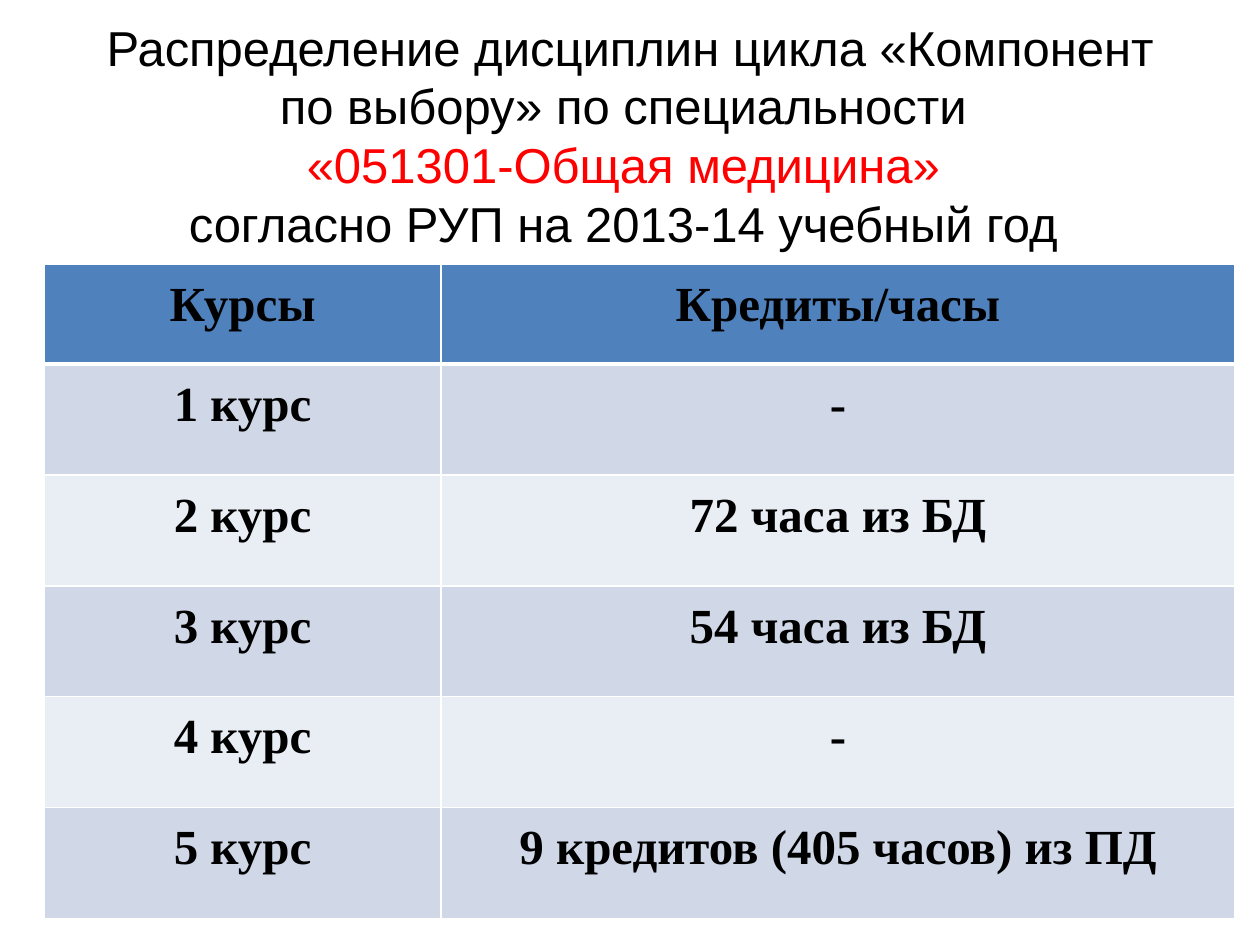
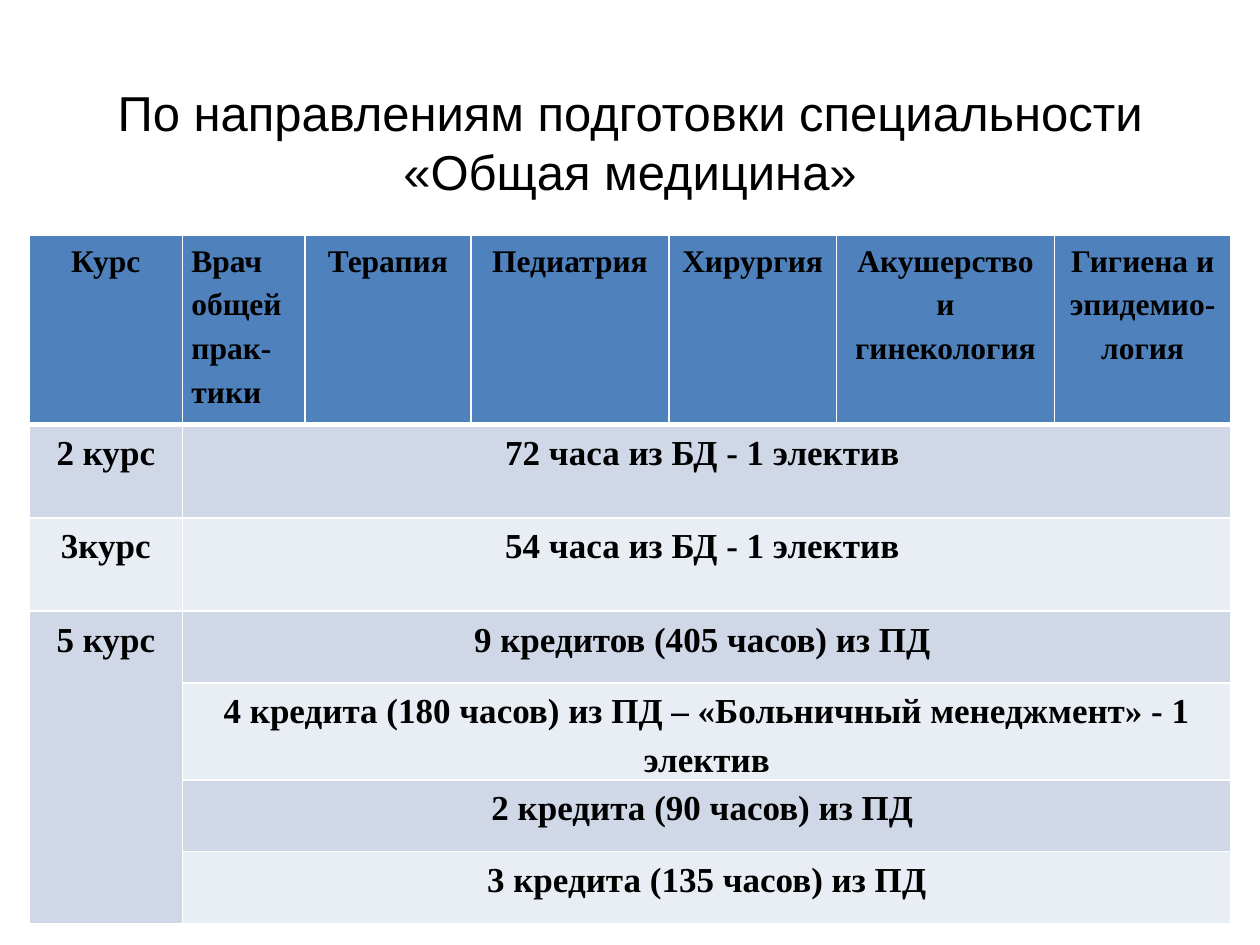
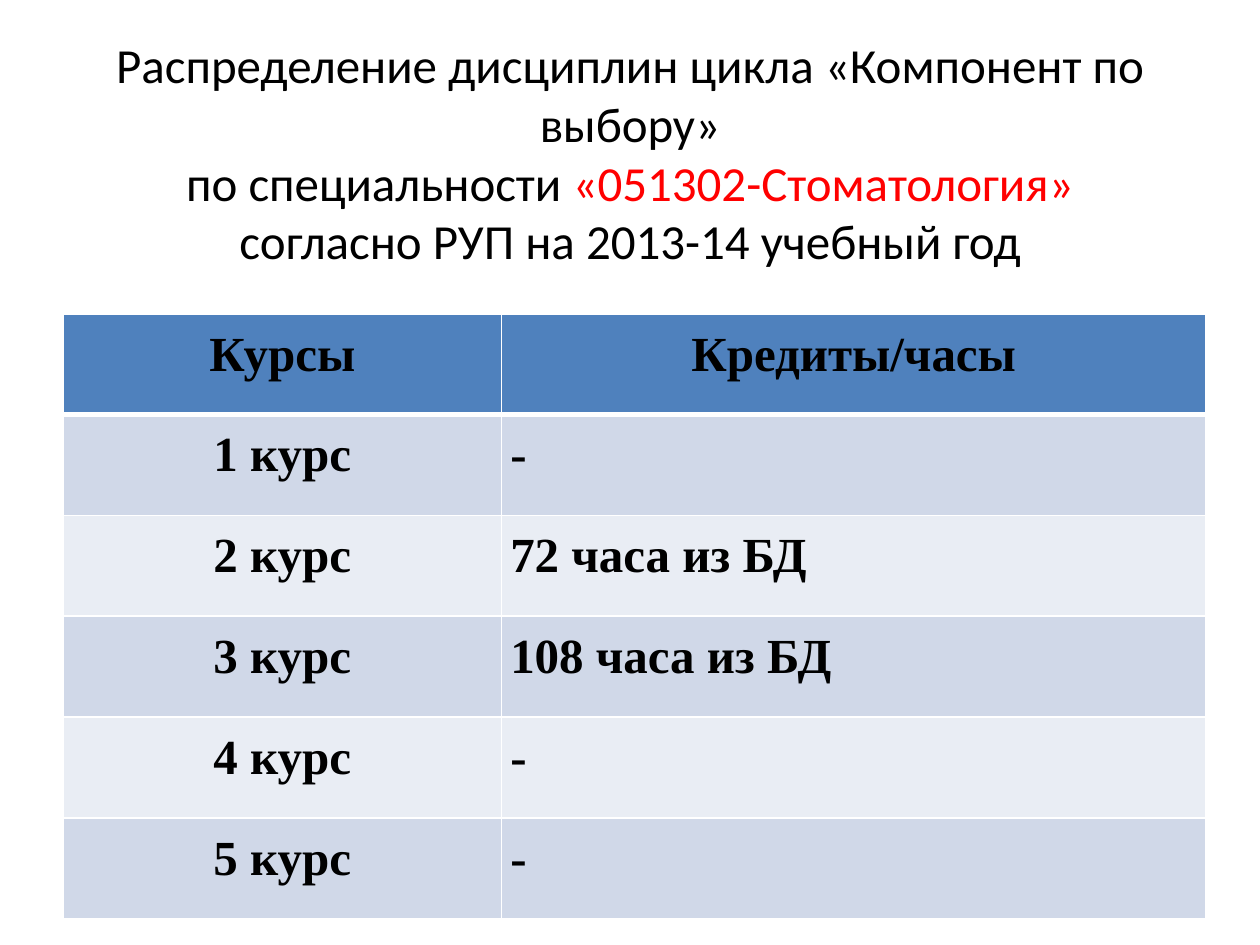
from dataclasses import dataclass

from lxml.etree import SubElement
from pptx import Presentation
from pptx.dml.color import RGBColor
from pptx.enum.text import MSO_ANCHOR, MSO_AUTO_SIZE, PP_ALIGN
from pptx.oxml.ns import qn
from pptx.util import Inches, Pt


@dataclass(frozen=True)
class Theme:
    """Colours, fonts and type sizes shared by the slides."""
    text: str = "000000"
    accent: str = "FF0000"
    header: str = "4F81BD"
    bands: tuple = ("D0D8E8", "E9EDF4")
    rule: str = "FFFFFF"
    table_font: str = "Times New Roman"
    title_size: float = 28
    title_leading: float = 33.5
    cell_leading: float = 1.25
    cell_margin: float = 0.07


THEME = Theme()
CENTER, JUSTIFY = PP_ALIGN.CENTER, PP_ALIGN.JUSTIFY

SLIDES = [
    {
        "title": [
            ("Распределение дисциплин цикла «Компонент по выбору» по специальности \n", THEME.text),
            ("«051301-Общая медицина» \n", THEME.accent),
            ("согласно РУП на 2013-14 учебный год ", THEME.text),
        ],
        "title_font": "Arial", "title_top": 0.13, "title_height": 2.05, "title_bottom": 0.22,
        "rows": [
            ("Курсы", "Кредиты/часы"),
            ("1 курс", "-"),
            ("2 курс", "72 часа из БД"),
            ("3 курс", "54 часа из БД"),
            ("4 курс", "-"),
            ("5 курс", "9 кредитов (405 часов) из ПД"),
        ],
        "origin": (0.35, 2.1), "widths": [3.15, 6.3], "heights": [0.79] + [0.88] * 5,
        "sizes": (28, 28), "justified": (),
    },
    {
        "title": [("По направлениям подготовки специальности «Общая медицина»", THEME.text)],
        "title_font": "Arial", "title_top": 0.47, "title_height": 1.48, "title_bottom": 0.22,
        "rows": [
            ("Курс", "Врач общей прак-тики", "Терапия", "Педиатрия", "Хирургия",
             "Акушерство и гинекология", "Гигиена и эпидемио-логия"),
            ("2 курс", "72 часа из БД - 1 электив "),
            ("3курс", "54 часа из БД - 1 электив "),
            ("5 курс", "9 кредитов (405 часов) из ПД "),
            (None, "4 кредита (180 часов) из ПД – «Больничный менеджмент» - 1 электив"),
            (None, "2 кредита (90 часов) из ПД "),
            (None, "3 кредита (135 часов) из ПД"),
        ],
        "origin": (0.23, 1.87), "widths": [1.22, 0.97, 1.32, 1.57, 1.33, 1.73, 1.4],
        "heights": [1.5, 0.74, 0.74, 0.57, 0.74, 0.57, 0.57],
        "sizes": (18, 20), "justified": [(0, 1)],
    },
    {
        "title": [
            ("Распределение дисциплин цикла «Компонент по выбору»\n по специальности ", THEME.text),
            ("«051302-Стоматология» \n", THEME.accent),
            ("согласно РУП на 2013-14 учебный год", THEME.text),
        ],
        "title_font": "Calibri", "title_top": 0.21, "title_height": 1.97, "title_bottom": 0.02,
        "rows": [
            ("Курсы", "Кредиты/часы"),
            ("1 курс", "-"),
            ("2 курс", "72 часа из БД"),
            ("3 курс", "108 часа из БД"),
            ("4 курс", "-"),
            ("5 курс", "-"),
        ],
        "origin": (0.5, 2.49), "widths": [3.48, 5.59], "heights": [0.8] * 6,
        "sizes": (28, 28), "justified": [(row, 1) for row in range(1, 6)],
    },
]


def write(paragraph, text, *, font, size, color=THEME.text, bold=False, align=CENTER, leading=None):
    """Add formatted text to a paragraph, with line breaks at newlines."""
    paragraph.alignment = align
    paragraph.line_spacing = leading
    for index, line in enumerate(text.split("\n")):
        if index:
            paragraph.add_line_break()
        if line:
            run = paragraph.add_run()
            run.text = line
            run.font.name, run.font.size, run.font.bold = font, Pt(size), bold
            run.font.color.rgb = RGBColor.from_string(color)


def add_title(slide, content):
    """Place and fill the title placeholder."""
    title = slide.shapes.title
    title.left, title.top = Inches(0.5), Inches(content["title_top"])
    title.width, title.height = Inches(9), Inches(content["title_height"])
    frame = title.text_frame
    frame.word_wrap, frame.auto_size = True, MSO_AUTO_SIZE.NONE
    frame.vertical_anchor = MSO_ANCHOR.MIDDLE
    frame.margin_bottom = Inches(content["title_bottom"])
    for text, color in content["title"]:
        write(frame.paragraphs[0], text, font=content["title_font"], size=THEME.title_size,
              color=color, leading=Pt(THEME.title_leading))


def style_cell(cell, row):
    """Set the margins, borders and band fill of a cell."""
    cell.margin_left = cell.margin_right = Inches(THEME.cell_margin)
    cell.margin_top = cell.margin_bottom = 0
    properties = cell._tc.get_or_add_tcPr()
    for side in "LRTB":
        width = 3 if (side == "B" and row == 0) or (side == "T" and row == 1) else 1
        line = SubElement(properties, qn(f"a:ln{side}"), w=str(Pt(width)))
        fill = SubElement(line, qn("a:solidFill"))
        SubElement(fill, qn("a:srgbClr"), val=THEME.rule)
    cell.fill.solid()
    color = THEME.bands[(row - 1) % 2] if row else THEME.header
    cell.fill.fore_color.rgb = RGBColor.from_string(color)


def add_course_table(slide, content):
    """Draw the course table, merging short rows across and missing labels upwards."""
    rows, widths, heights = content["rows"], content["widths"], content["heights"]
    left, top = content["origin"]
    table = slide.shapes.add_table(
        len(rows), len(widths), Inches(left), Inches(top),
        Inches(sum(widths)), Inches(sum(heights))).table
    for column, width in zip(table.columns, widths):
        column.width = Inches(width)
    for table_row, height in zip(table.rows, heights):
        table_row.height = Inches(height)

    label_row = 0
    for row, texts in enumerate(rows):
        for column in range(len(widths)):
            style_cell(table.cell(row, column), row)
        for column, text in enumerate(texts):
            if text is not None:
                align = JUSTIFY if (row, column) in content["justified"] else CENTER
                write(table.cell(row, column).text_frame.paragraphs[0], text,
                      font=THEME.table_font, size=content["sizes"][min(row, 1)], bold=True,
                      align=align, leading=THEME.cell_leading)
        if len(texts) < len(widths):
            table.cell(row, len(texts) - 1).merge(table.cell(row, len(widths) - 1))
        if texts[0] is not None:
            label_row = row
        elif row == len(rows) - 1 or rows[row + 1][0] is not None:
            table.cell(label_row, 0).merge(table.cell(row, 0))


def main():
    """Build the presentation and save it."""
    presentation = Presentation()
    presentation.slide_width, presentation.slide_height = Inches(10), Inches(7.5)
    for content in SLIDES:
        slide = presentation.slides.add_slide(presentation.slide_layouts[5])
        add_course_table(slide, content)
        add_title(slide, content)
    presentation.save("out.pptx")


if __name__ == "__main__":
    main()
